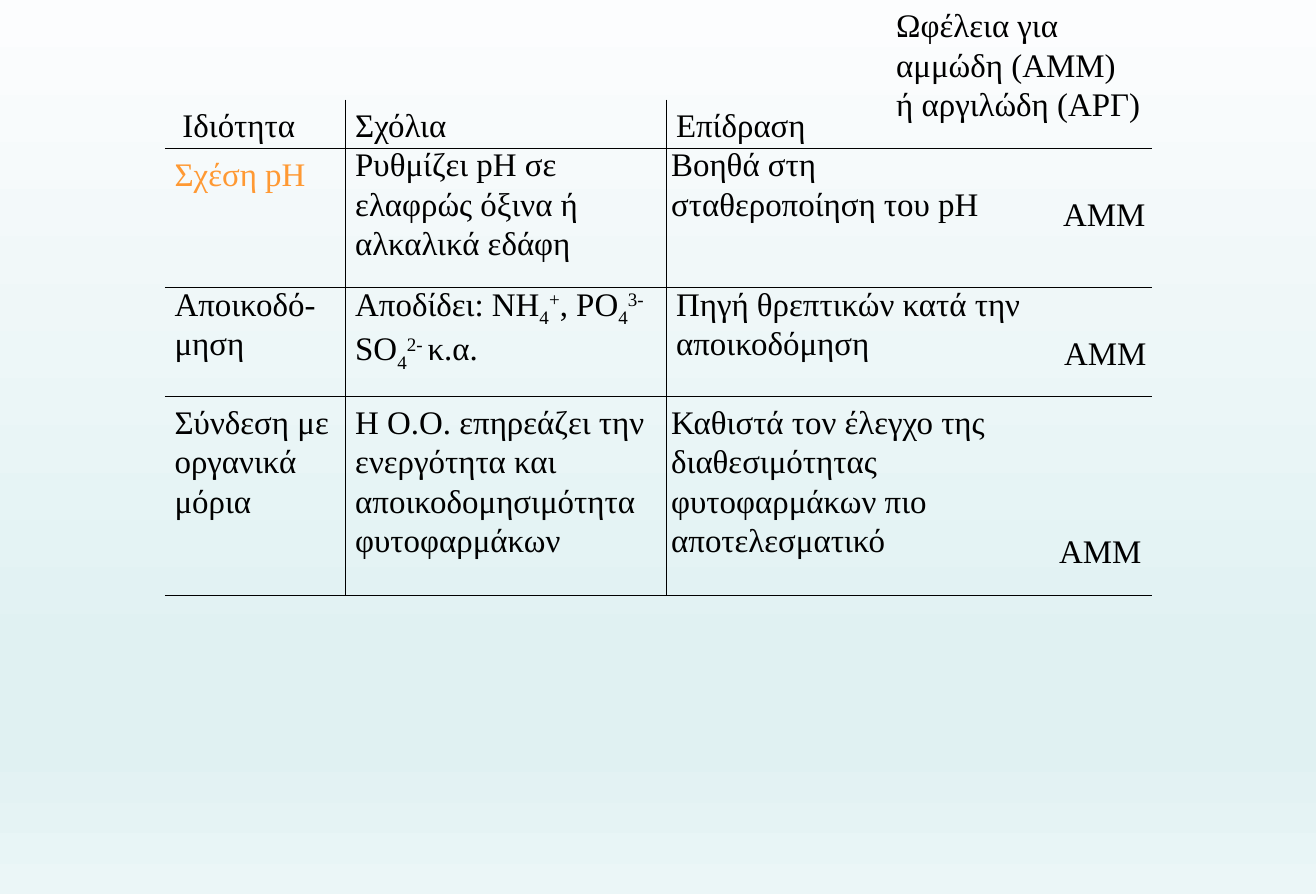
"""Build a slide comparing the properties of soil organic matter."""
from dataclasses import dataclass
from itertools import pairwise, product

from lxml.etree import SubElement
from pptx import Presentation
from pptx.dml.color import RGBColor
from pptx.enum.shapes import MSO_CONNECTOR
from pptx.enum.text import MSO_AUTO_SIZE
from pptx.oxml.ns import qn
from pptx.slide import Slide
from pptx.util import Inches, Pt

COLORS = {
    "text": "000000",
    "accent": "FF9933",
    "rule": "000000",
    "top": "FCFDFE",
    "middle": "E0F1F2",
    "bottom": "EBF6F7",
}
BACKGROUND_STOPS = ((0, "top"), (74, "middle"), (83, "middle"), (100, "bottom"))
BASELINES = {"_": -25000, "^": 30000}
FONT = "Times New Roman"
LINE_HEIGHT = 0.4
BOX_PADDING = 0.11

TABLE_LEFT, TABLE_RIGHT = 1.67, 11.67
COLUMN_RULES = (3.5, 6.75)
ROW_RULES = (1.51, 2.91, 4.02, 6.04)
COLUMN_BREAKS = (1.01, 2.82, 4.02, 6.04)


@dataclass(frozen=True)
class Entry:
    """Text placed in the table; "|" parts spans, "_" lowers and "^" raises one."""

    left: float
    top: float
    width: float
    lines: tuple[str, ...]
    color: str = "text"


ENTRIES = (
    Entry(1.75, 1.01, 1.35, ("Ιδιότητα",)),
    Entry(3.5, 1.01, 1.14, ("Σχόλια",)),
    Entry(6.75, 1.01, 1.53, ("Επίδραση",)),
    Entry(8.98, 0, 2.7, ("Ωφέλεια για", "αμμώδη (ΑΜΜ)", "ή αργιλώδη (ΑΡΓ)")),
    Entry(1.67, 1.51, 1.54, ("Σχέση pH",), "accent"),
    Entry(3.5, 1.41, 2.57, ("Ρυθμίζει pH σε", "ελαφρώς όξινα ή", "αλκαλικά εδάφη")),
    Entry(6.7, 1.41, 3.35, ("Βοηθά στη", "σταθεροποίηση του pH")),
    Entry(10.67, 1.91, 1.05, ("ΑΜΜ",)),
    Entry(1.67, 2.82, 1.64, ("Αποικοδό-", "μηση")),
    Entry(3.5, 2.82, 3.23, ("Αποδίδει: ΝΗ|_4|^+|, ΡΟ|_4|^3-", "SO|_4|^2- |κ.α.")),
    Entry(6.75, 2.82, 3.72, ("Πηγή θρεπτικών κατά την", "αποικοδόμηση")),
    Entry(10.68, 3.32, 1.05, ("ΑΜΜ",)),
    Entry(1.67, 4.02, 1.78, ("Σύνδεση με", "οργανικά", "μόρια")),
    Entry(3.5, 4.02, 3.16, (
        "Η Ο.Ο. επηρεάζει την", "ενεργότητα και", "αποικοδομησιμότητα", "φυτοφαρμάκων")),
    Entry(6.7, 4.02, 3.41, (
        "Καθιστά τον έλεγχο της", "διαθεσιμότητας", "φυτοφαρμάκων πιο", "αποτελεσματικό")),
    Entry(10.63, 5.33, 1.05, ("ΑΜΜ",)),
)


def paint_background(page: Slide) -> None:
    """Fill the page with a vertical gradient."""
    fill = page.background.fill
    fill.gradient()
    fill.gradient_angle = 270
    stops = page.element.find(".//" + qn("a:gsLst"))
    for stop in list(stops):
        stops.remove(stop)
    for percent, color in BACKGROUND_STOPS:
        stop = SubElement(stops, qn("a:gs"), pos=str(percent * 1000))
        SubElement(stop, qn("a:srgbClr"), val=COLORS[color])


def add_span(para, text: str, *, color: str, size: float = 24, baseline: int = 0) -> None:
    """Append formatted text to a paragraph."""
    span = para.add_run()
    span.text = text
    span.font.name = FONT
    span.font.size = Pt(size)
    span.font.color.rgb = RGBColor.from_string(COLORS[color])
    if baseline:
        span.font._element.set("baseline", str(baseline))


def draw_entry(page: Slide, entry: Entry) -> None:
    """Draw one text box with a paragraph for each line."""
    height = BOX_PADDING + LINE_HEIGHT * len(entry.lines)
    box = page.shapes.add_textbox(
        Inches(entry.left), Inches(entry.top), Inches(entry.width), Inches(height))
    frame = box.text_frame
    frame.word_wrap = False
    frame.auto_size = MSO_AUTO_SIZE.SHAPE_TO_FIT_TEXT
    for index, line in enumerate(entry.lines):
        para = frame.add_paragraph() if index else frame.paragraphs[0]
        for part in line.split("|"):
            baseline = BASELINES.get(part[0], 0)
            text = part[1:] if baseline else part
            add_span(para, text, color=entry.color, baseline=baseline)


def draw_rule(page: Slide, left: float, top: float, right: float, bottom: float) -> None:
    """Draw one thin straight rule."""
    rule = page.shapes.add_connector(
        MSO_CONNECTOR.STRAIGHT, Inches(left), Inches(top), Inches(right), Inches(bottom))
    rule.line.color.rgb = RGBColor.from_string(COLORS["rule"])
    rule.line.width = Pt(0.75)
    SubElement(rule.element.spPr, qn("a:effectLst"))


def main() -> None:
    """Build and save the deck."""
    deck = Presentation()
    deck.slide_width, deck.slide_height = Inches(13.33), Inches(9.06)
    page = deck.slides.add_slide(deck.slide_layouts[6])
    paint_background(page)
    for entry in ENTRIES:
        draw_entry(page, entry)
    for height in ROW_RULES:
        draw_rule(page, TABLE_LEFT, height, TABLE_RIGHT, height)
    for column, (top, bottom) in product(COLUMN_RULES, pairwise(COLUMN_BREAKS)):
        draw_rule(page, column, top, column, bottom)
    deck.save("out.pptx")


if __name__ == "__main__":
    main()
